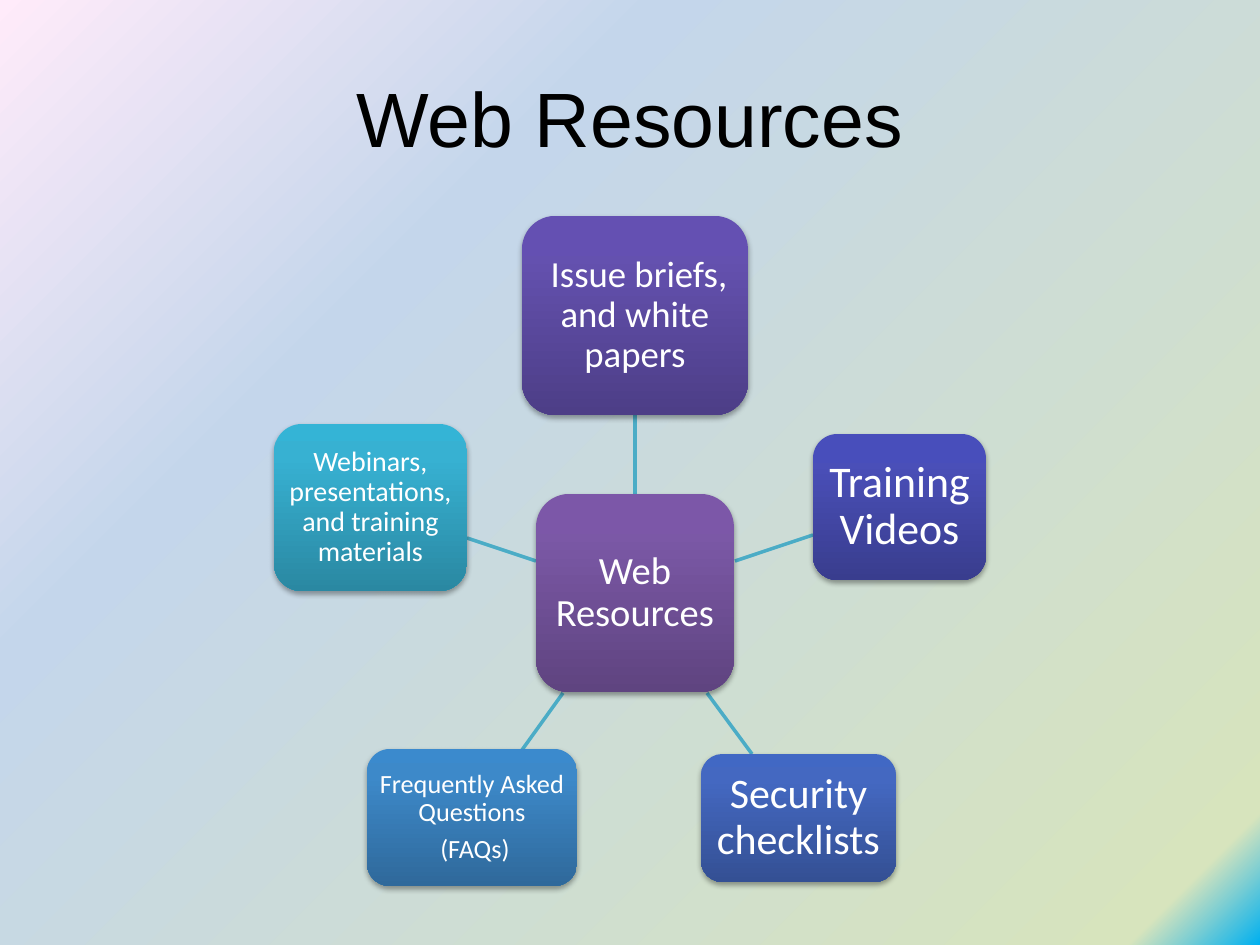
from lxml.etree import SubElement as Sub
from pptx import Presentation
from pptx.dml.color import RGBColor as RGB
from pptx.enum.shapes import MSO_CONNECTOR as Conn, MSO_SHAPE as Kind
from pptx.enum.text import MSO_ANCHOR as Anchor, PP_ALIGN as Align
from pptx.oxml.ns import qn
from pptx.util import Emu, Pt

SCALE = 914400 / 126


def px(n):
    return Emu(round(n * SCALE))


def color(code):
    return RGB.from_string(code)


def put(item, vals):
    for key, val in vals.items():
        setattr(item, key, val)


def grade(fill, root, angle, stops):
    """Fill with a linear gradient of (percent, colour) stops."""
    fill.gradient()
    fill.gradient_angle = angle
    group = next(root.iter(qn("a:gsLst")))
    for old in list(group):
        group.remove(old)
    for pos, code in stops:
        stop = Sub(group, qn("a:gs"), pos=str(pos * 1000))
        Sub(stop, qn("a:srgbClr"), val=code)


class Deck:
    face = "Calibri"
    ink = "FFFFFF"
    wire = "4BACC6"

    def __init__(self, wide, high):
        self.prs = Presentation()
        put(self.prs, {"slide_width": px(wide), "slide_height": px(high)})
        self.slide = self.prs.slides.add_slide(self.prs.slide_layouts[5])

    def back(self, angle, stops):
        ground = self.slide.background
        grade(ground.fill, self.slide.element, angle, stops)

    def label(self, frame, lines, size, face, ink, style):
        put(frame, {"word_wrap": True, "vertical_anchor": Anchor.MIDDLE})
        frame.text = "\n".join(lines)
        for para in frame.paragraphs:
            put(para, {"alignment": Align.CENTER, **style})
            put(para.font, {"name": face, "size": Pt(size)})
            para.font.color.rgb = color(ink)
        for para in frame.paragraphs[1:]:
            para.space_before = Pt(5)

    def title(self, text, box):
        head = self.slide.shapes.title
        put(head, dict(zip(("left", "top", "width", "height"), map(px, box))))
        self.label(head.text_frame, [text], 44, "Arial", "000000", {})

    def spoke(self, *ends):
        line = self.slide.shapes.add_connector(Conn.STRAIGHT, *map(px, ends))
        line.line.color.rgb = color(self.wire)
        line.line.width = Pt(2)
        Sub(line.element.spPr, qn("a:effectLst"))

    def node(self, box, tones, lines, size, pad):
        shape = self.slide.shapes.add_shape(Kind.ROUNDED_RECTANGLE, *map(px, box))
        grade(shape.fill, shape.element, 270, zip((0, 20, 100), tones))
        shape.line.fill.background()
        self.shade(shape)
        sides = ("left", "top", "right", "bottom")
        put(shape.text_frame, {f"margin_{side}": px(pad) for side in sides})
        self.label(shape.text_frame, lines, size, self.face, self.ink,
                   {"line_spacing": 0.9})

    def shade(self, shape):
        """Give the shape a soft shadow straight below it."""
        shape.shadow.inherit = False
        effect = shape.element.spPr.find(qn("a:effectLst"))
        drop = Sub(effect, qn("a:outerShdw"), blurRad=str(Pt(3.1)),
                   dist=str(Pt(1.8)), dir="5400000", rotWithShape="0")
        tone = Sub(drop, qn("a:srgbClr"), val="000000")
        Sub(tone, qn("a:alpha"), val="35000")


SKY = [(0, "FFEBFA"), (30, "C4D6EB"), (94, "D7E4BD"), (100, "00B0F0")]
SPOKES = [
    (635, 415, 635, 494),
    (735, 561, 813, 535),
    (707, 693, 752, 754),
    (563, 693, 522, 750),
    (536, 561, 467, 538),
]
# Box, colours from top to bottom, lines, text size, padding
NODES = [
    ((536, 494, 198, 198), ("7C57A8", "7B58A6", "5F4480"),
     ["Web Resources"], 22, 8),
    ((522, 216, 226, 199), ("6450B2", "6451AF", "4D3E87"),
     [" Issue briefs, and white papers"], 21, 8),
    ((813, 434, 173, 146), ("484EBB", "4A4FB8", "393D8E"),
     ["Training Videos"], 25, 8),
    ((701, 754, 195, 128), ("4168C4", "4468C1", "345094"),
     ["Security checklists"], 24, 8),
    ((367, 749, 210, 137), ("3B8ACD", "3D89C9", "2F699B"),
     ["Frequently Asked Questions", " (FAQs)"], 15, 5),
    ((274, 424, 193, 167), ("34B4D6", "37B1D2", "2A88A2"),
     ["Webinars, presentations, and training materials"], 16, 5),
]


def main():
    deck = Deck(1260, 945)
    deck.back(315, SKY)
    deck.title("Web Resources", (63, 38, 1134, 158))
    for ends in SPOKES:
        deck.spoke(*ends)
    for item in NODES:
        deck.node(*item)
    deck.prs.save("out.pptx")


if __name__ == "__main__":
    main()
